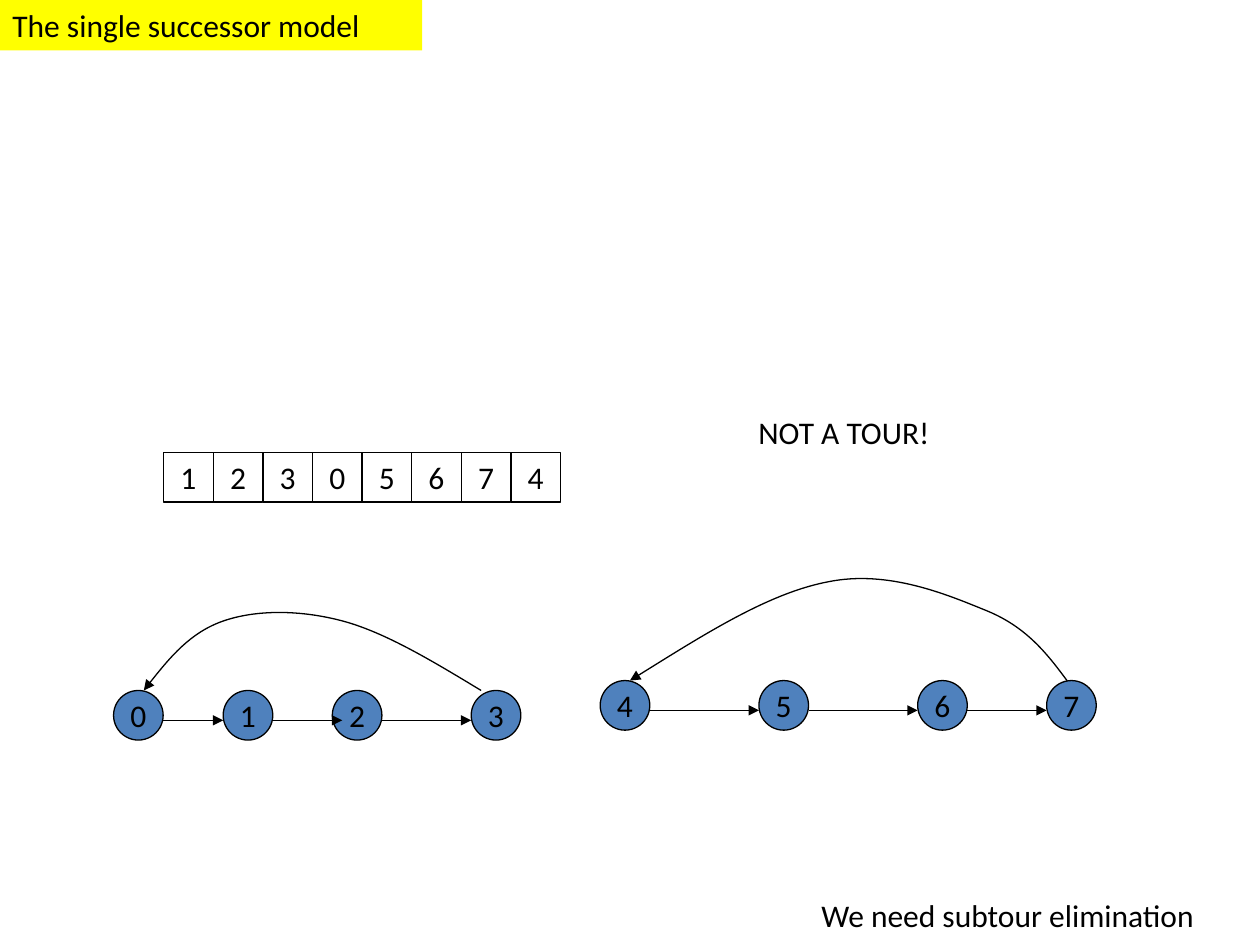
from dataclasses import dataclass
from itertools import pairwise
from typing import Optional

from lxml import etree
from pptx import Presentation
from pptx import util as u
from pptx.dml.color import RGBColor
from pptx.enum import shapes as s, text as t
from pptx.oxml.ns import qn

BLACK = RGBColor(0, 0, 0)
BLUE = RGBColor(0x4F, 0x81, 0xBD)
YELLOW = RGBColor(0xFF, 0xFF, 0)

# The slide is a grid of 25.4 columns by 19.05 rows, one centimetre each
WIDE, HIGH = 25.4, 19.05
CELL = 1      # side of an array cell, diameter of a node
DROP = 0.6    # from the top of a node down to its arrows


@dataclass
class Label:
    text: str
    col: float
    row: float
    cols: float
    fill: Optional[RGBColor] = None


@dataclass
class Cycle:
    first: int
    row: float
    cols: list[float]
    reach: list[float]              # how far each arrow runs into its target
    arc: list[tuple[float, float]]  # start, then three Bezier points per piece


LABELS = [
    Label("The single successor model", 0, 0, 8.51, YELLOW),
    Label("NOT A TOUR!", 15.04, 8.2, 4.75),
    Label("We need subtour elimination", 16.31, 17.93, 8.94),
]
NEXT = [1, 2, 3, 0, 5, 6, 7, 4]
CYCLES = [
    Cycle(0, 13.92, [2.29, 4.5, 6.7, 9.5], [0, 0.2, 0],
          [(9.7, 13.92), (8.74, 13.34), (7.77, 12.75), (6.91, 12.52),
           (6.05, 12.29), (5.16, 12.29), (4.5, 12.52),
           (3.84, 12.75), (3.35, 13.34), (2.9, 13.92)]),
    Cycle(4, 13.72, [12.1, 15.3, 18.5, 21.1], [0, 0, 0],
          [(21.51, 13.72), (21.11, 13.18), (20.7, 12.65), (19.91, 12.32),
           (19.1, 11.99), (17.91, 11.48), (16.69, 11.73),
           (15.49, 11.96), (14.1, 12.85), (12.7, 13.72)]),
]


def write(frame, words: str, align) -> None:
    para = frame.paragraphs[0]
    para.text = words
    para.alignment = align
    para.font.name = "Calibri"
    para.font.size = u.Pt(18)
    para.font.color.rgb = BLACK


def ink(line, head: bool = False) -> None:
    line.color.rgb = BLACK
    line.width = u.Pt(0.75)
    if head:
        end = etree.SubElement(line._get_or_add_ln(), qn("a:tailEnd"))
        end.set("type", "triangle")


def label(slide, item: Label) -> None:
    box = slide.shapes.add_textbox(
        u.Cm(item.col), u.Cm(item.row), u.Cm(item.cols), u.Cm(1.02))
    if item.fill is not None:
        box.fill.solid()
        box.fill.fore_color.rgb = item.fill
    box.text_frame.word_wrap = True
    write(box.text_frame, item.text, t.PP_ALIGN.LEFT)


def mark(slide, kind, num: int, col: float, row: float,
         fill: Optional[RGBColor] = None) -> None:
    shape = slide.shapes.add_shape(
        kind, u.Cm(col), u.Cm(row), u.Cm(CELL), u.Cm(CELL))
    shape.shadow.inherit = False
    if fill is None:
        shape.fill.background()
    else:
        shape.fill.solid()
        shape.fill.fore_color.rgb = fill
    ink(shape.line)
    frame = shape.text_frame
    frame.word_wrap = False
    frame.vertical_anchor = t.MSO_ANCHOR.MIDDLE
    write(frame, str(num), t.PP_ALIGN.CENTER)


def arrow(slide, start: float, stop: float, row: float) -> None:
    line = slide.shapes.add_connector(
        s.MSO_CONNECTOR.STRAIGHT,
        u.Cm(start), u.Cm(row), u.Cm(stop), u.Cm(row))
    ink(line.line, head=True)
    etree.SubElement(line._element.spPr, qn("a:effectLst"))


def curve(slide, points: list[tuple[float, float]]) -> None:
    pts = [(u.Cm(x), u.Cm(y)) for x, y in points]
    pen = slide.shapes.build_freeform(*pts[0])
    pen.add_line_segments(pts[1:], close=False)
    shape = pen.convert_to_shape()
    # Merge each three straight steps into one Bezier piece
    steps = list(shape._element.iter(qn("a:lnTo")))
    for i in range(0, len(steps), 3):
        trio = steps[i:i + 3]
        bend = etree.Element(qn("a:cubicBezTo"))
        trio[0].addprevious(bend)
        for step in trio:
            bend.append(step[0])
            step.getparent().remove(step)
    shape.shadow.inherit = False
    shape.fill.background()
    ink(shape.line, head=True)


def main() -> None:
    deck = Presentation()
    deck.slide_width, deck.slide_height = u.Cm(WIDE), u.Cm(HIGH)
    slide = deck.slides.add_slide(deck.slide_layouts[6])

    # Title and remarks
    for item in LABELS:
        label(slide, item)

    # Successor array
    for i, num in enumerate(NEXT):
        mark(slide, s.MSO_SHAPE.RECTANGLE, num, 3.3 + i * CELL, 9.12)

    # Two subtours: nodes, forward arrows, arc back to the start
    for ring in CYCLES:
        for num, col in enumerate(ring.cols, ring.first):
            mark(slide, s.MSO_SHAPE.OVAL, num, col, ring.row, BLUE)
        for (left, right), more in zip(pairwise(ring.cols), ring.reach):
            arrow(slide, left + CELL, right + more, ring.row + DROP)
        curve(slide, ring.arc)

    deck.save("out.pptx")


if __name__ == "__main__":
    main()
